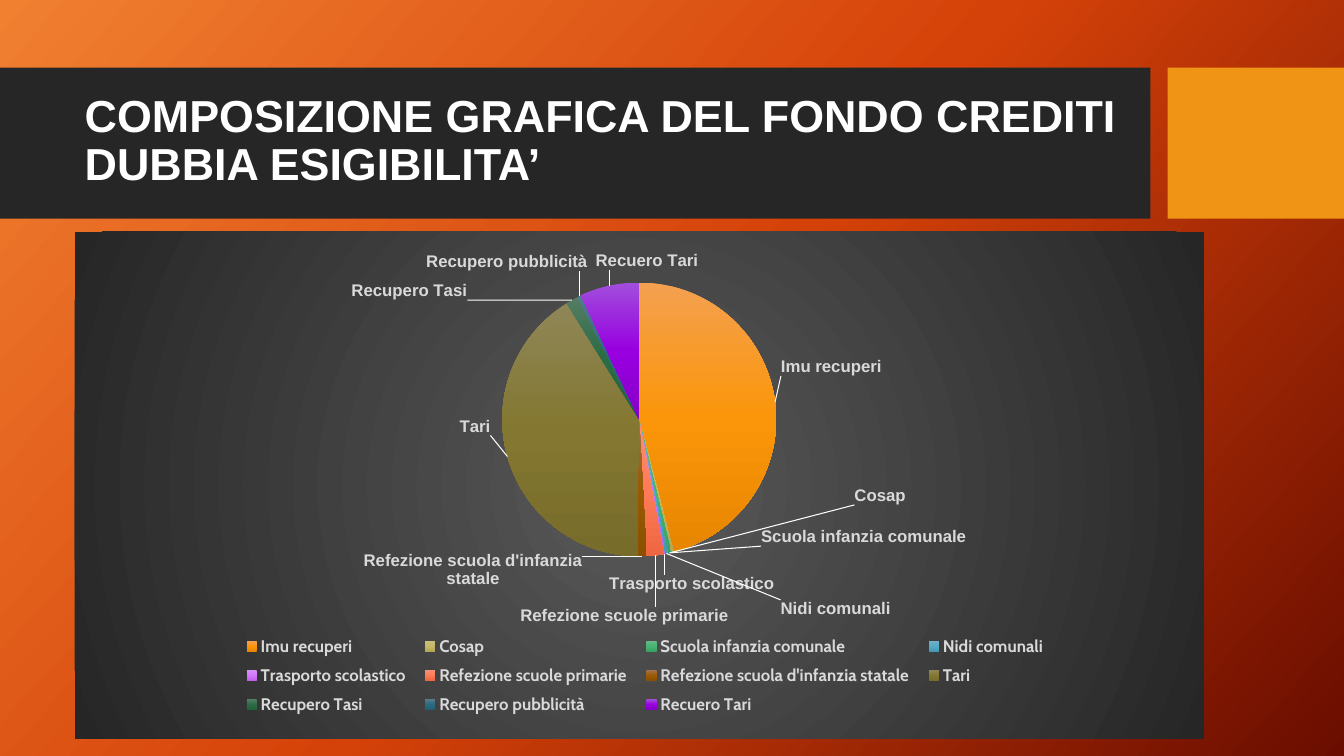
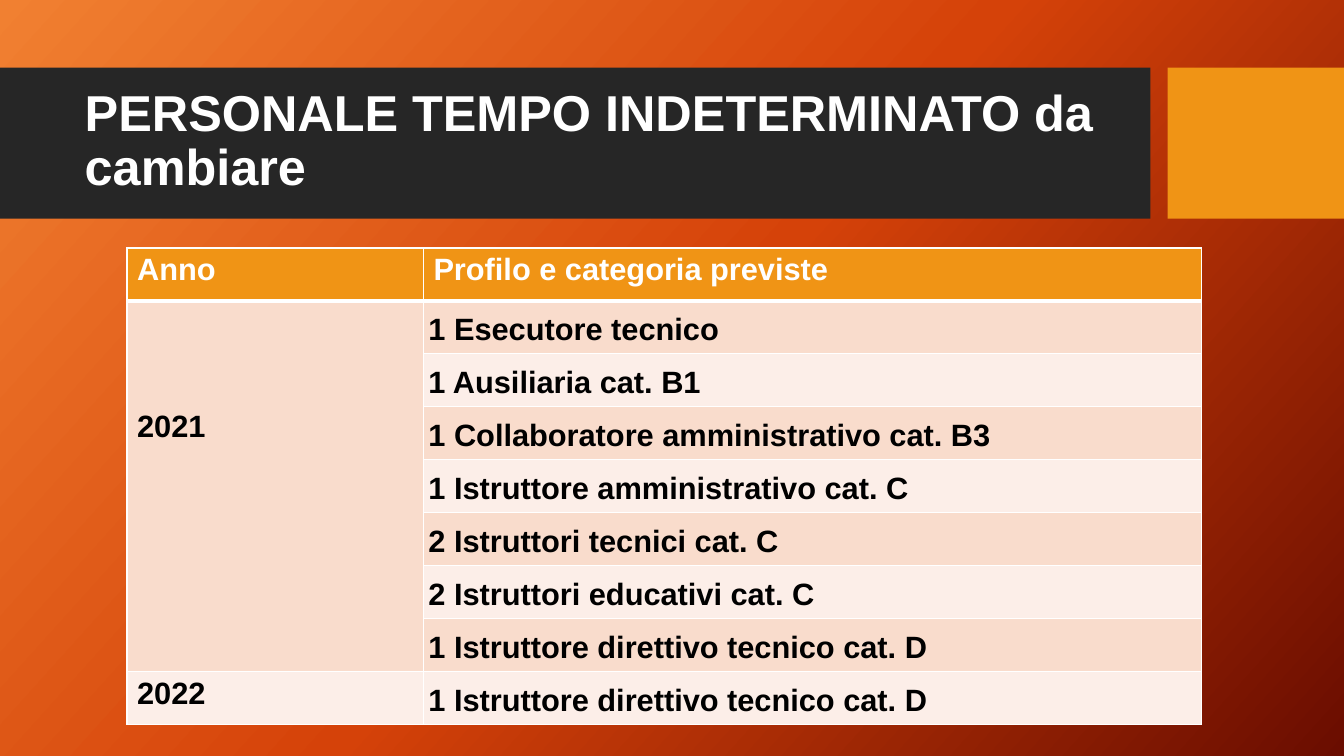
from pptx import Presentation
from pptx.chart.data import CategoryChartData
from pptx.dml.color import RGBColor
from pptx.enum.chart import XL_CHART_TYPE, XL_LABEL_POSITION, XL_LEGEND_POSITION
from pptx.enum.shapes import MSO_SHAPE
from pptx.enum.text import MSO_ANCHOR, MSO_AUTO_SIZE, PP_ALIGN
from pptx.oxml import parse_xml
from pptx.oxml.ns import nsdecls, qn
from pptx.util import Inches, Pt

COLORS = {
    "band": "262626", "accent": "F09415", "white": "FFFFFF", "black": "000000",
    "label": "D9D9D9", "row_dark": "F9DCCC", "row_light": "FCEEE8",
}
BACKGROUND = ("F18031", "D54209", "6A0D00")
CHART_AREA = ("595959", "262626")

# category, value, gradient, label shift as fractions of the chart's size
CREDITS = [
    ("Imu recuperi", 46, ("F4A050", "FB960A", "E88600"), (0, -0.05)),
    ("Cosap", 0.3, ("C8BE7F", "C5B867", "B4A756"), (0.16, -0.14)),
    ("Scuola infanzia comunale", 0.4, ("67B884", "46B472", "3AA464"), (0.08, -0.06)),
    ("Nidi comunali", 0.3, ("71B0C8", "55A9C5", "4798B4"), (0.1, 0.08)),
    ("Trasporto scolastico", 0.2, ("D790FB", "D377FF", "BE62EA"), (-0.05, 0.03)),
    ("Refezione scuole primarie", 2, ("FD8F75", "FF7B57", "EE6742"), (-0.12, 0.09)),
    ("Refezione scuola d'infanzia statale", 1, ("A1704C", "9A5A03", "8B5100"), (-0.15, -0.02)),
    ("Tari", 41, ("8F8658", "837731", "776C29"), (-0.01, -0.08)),
    ("Recupero Tasi", 1.4, ("557D62", "2A6C44", "23633C"), (-0.09, 0.01)),
    ("Recupero pubblicità", 0.5, ("557B8B", "2B697E", "235F74"), (0.01, -0.04)),
    ("Recuero Tari", 7, ("A14EDC", "9800E0", "8700C7"), (0.08, -0.02)),
]
STAFF = [
    ("2021", "1 Esecutore tecnico"),
    ("", "1 Ausiliaria cat. B1"),
    ("", "1 Collaboratore amministrativo cat. B3"),
    ("", "1 Istruttore amministrativo cat. C"),
    ("", "2 Istruttori tecnici cat. C"),
    ("", "2 Istruttori educativi cat. C"),
    ("", "1 Istruttore direttivo tecnico cat. D"),
    ("2022", "1 Istruttore direttivo tecnico cat. D"),
]


def rgb(name):
    return RGBColor.from_string(COLORS[name])


def set_attrs(obj, **values):
    for name, value in values.items():
        setattr(obj, name, value)


def set_font(font, size, color, name="Arial", bold=True):
    set_attrs(font, size=Pt(size), name=name, bold=bold)
    font.color.rgb = rgb(color)


def gradient(colors, angle=None):
    """Evenly spaced gradient: linear at an angle, or circular without one."""
    step = 100000 // (len(colors) - 1)
    stops = "".join(f'<a:gs pos="{i * step}"><a:srgbClr val="{color}"/></a:gs>'
                    for i, color in enumerate(colors))
    if angle is None:
        direction = ('<a:path path="circle"><a:fillToRect l="50000" t="50000" '
                     'r="50000" b="50000"/></a:path>')
    else:
        direction = f'<a:lin ang="{angle * 60000}" scaled="0"/>'
    return parse_xml(f'<a:gradFill {nsdecls("a")} rotWithShape="1">'
                     f'<a:gsLst>{stops}</a:gsLst>{direction}</a:gradFill>')


def replace_gradients(element, gradients):
    """Swap the gradient fills under an element, in document order."""
    for old, new in zip(element.findall(".//" + qn("a:gradFill")), gradients):
        old.getparent().replace(old, new)


def style_layout(layout, slide):
    """Give the layout its background and bands, which are drawn via a slide."""
    layout.background.fill.gradient()
    replace_gradients(layout.element, [gradient(BACKGROUND, 42)])
    for left, width, color in ((0, 11.41, "band"), (11.58, 1.75, "accent")):
        sp = slide.shapes.add_shape(MSO_SHAPE.RECTANGLE, Inches(left), Inches(0.67),
                                    Inches(width), Inches(1.5))
        sp.shadow.inherit = False
        sp.fill.solid()
        sp.fill.fore_color.rgb = rgb(color)
        sp.line.fill.background()
        layout.shapes.element.insert(2, sp.element)


def add_title(slide, text, size):
    title = slide.shapes.title
    set_attrs(title, left=Inches(0.74), top=Inches(0.82),
              width=Inches(10.51), height=Inches(1.18))
    tf = title.text_frame
    set_attrs(tf, text=text, word_wrap=True, auto_size=MSO_AUTO_SIZE.NONE,
              vertical_anchor=MSO_ANCHOR.MIDDLE)
    p = tf.paragraphs[0]
    set_attrs(p, alignment=PP_ALIGN.LEFT, line_spacing=0.9)
    set_font(p.runs[0].font, size, "white")


def manual_layout(**values):
    items = "".join(f'<c:{name} val="{value}"/>' for name, value in values.items())
    return parse_xml(f'<c:layout {nsdecls("c")}><c:manualLayout>{items}'
                     '</c:manualLayout></c:layout>')


def set_layout(element, index, **values):
    """Place a chart part, given as fractions of the chart's size."""
    for old in element.findall(qn("c:layout")):
        element.remove(old)
    element.insert(index, manual_layout(**values))


def style_labels(series, chart):
    labels = series.data_labels
    set_attrs(labels, show_category_name=True, show_value=False,
              position=XL_LABEL_POSITION.OUTSIDE_END,
              number_format="#,##0.00\\ _€", number_format_is_linked=False)
    set_font(labels.font, 12, "label")
    for i in range(len(CREDITS)):
        label = series.points[i].data_label
        label.position = XL_LABEL_POSITION.OUTSIDE_END
        set_font(label.font, 12, "label")
    for element, credit in zip(chart.element.iter(qn("c:dLbl")), CREDITS):
        x, y = credit[3]
        set_layout(element, 1, x=x, y=y)
        element.find(qn("c:showVal")).set("val", "0")
        element.find(qn("c:showCatName")).set("val", "1")
    chart.element.find(".//" + qn("c:dLbls")).append(parse_xml(
        f'<c:leaderLines {nsdecls("c", "a")}><c:spPr><a:ln w="9525"><a:solidFill>'
        f'<a:srgbClr val="{COLORS["white"]}"/></a:solidFill></a:ln></c:spPr></c:leaderLines>'))


def add_credit_pie(slide):
    data = CategoryChartData()
    data.categories = [credit[0] for credit in CREDITS]
    data.add_series("Series 1", [credit[1] for credit in CREDITS])
    chart = slide.shapes.add_chart(XL_CHART_TYPE.PIE, Inches(0.74), Inches(2.3),
                                   Inches(11.2), Inches(5.03), data).chart
    set_attrs(chart, has_title=False, has_legend=True)
    set_font(chart.font, 10, "white", "Cabin", False)
    set_attrs(chart.legend, position=XL_LEGEND_POSITION.BOTTOM, include_in_layout=False)
    set_font(chart.legend.font, 12, "label", "Cabin")

    plot = chart.plots[0]
    plot.vary_by_categories = True
    series = plot.series[0]
    for i in range(len(CREDITS)):
        series.points[i].format.fill.gradient()
    replace_gradients(chart.element, [gradient(credit[2], 90) for credit in CREDITS])
    style_labels(series, chart)

    set_layout(chart.element.find(".//" + qn("c:plotArea")), 0, layoutTarget="inner",
               xMode="edge", yMode="edge", x=0.08, y=0.1, w=0.84, h=0.54)
    set_layout(chart.element.find(".//" + qn("c:legend")), 1,
               xMode="edge", yMode="edge", x=0.14, y=0.78, w=0.73, h=0.19)
    area = parse_xml(f'<c:spPr {nsdecls("c", "a")}><a:ln><a:noFill/></a:ln></c:spPr>')
    area.insert(0, gradient(CHART_AREA))
    chart.element.find(qn("c:chart")).addnext(area)


def set_borders(cell, **widths):
    """Draw white cell borders; widths are in points by side: L, R, T, B."""
    tcPr = cell._tc.get_or_add_tcPr()
    for i, side in enumerate("LRTB"):
        tcPr.insert(i, parse_xml(
            f'<a:ln{side} {nsdecls("a")} w="{Pt(widths.get(side, 1))}"><a:solidFill>'
            f'<a:srgbClr val="{COLORS["white"]}"/></a:solidFill></a:ln{side}>'))


def fill_cell(cell, text, fill, color="black", **borders):
    cell.fill.solid()
    cell.fill.fore_color.rgb = rgb(fill)
    set_borders(cell, **borders)
    if text:
        cell.text = text
        set_font(cell.text_frame.paragraphs[0].runs[0].font, 22, color)


def add_staff_table(slide):
    rows = len(STAFF) + 1
    table = slide.shapes.add_table(rows, 2, Inches(1.26), Inches(2.46),
                                   Inches(10.66), Inches(4.73)).table
    for column, width in zip(table.columns, (2.94, 7.72)):
        column.width = Inches(width)
    for col, text in enumerate(("Anno", "Profilo e categoria previste")):
        fill_cell(table.cell(0, col), text, "accent", "white", B=3)
    for row, (year, profile) in enumerate(STAFF, 1):
        top = 3 if row == 1 else 1
        band = "row_dark" if row % 2 else "row_light"
        fill_cell(table.cell(row, 0), year, band, T=top)
        cell = table.cell(row, 1)
        fill_cell(cell, profile, band, T=top)
        set_attrs(cell, margin_left=Inches(0.05), margin_right=Inches(0.05))
        set_attrs(cell.text_frame.paragraphs[0], alignment=PP_ALIGN.JUSTIFY, line_spacing=1.2)
    first_year = table.cell(1, 0)
    first_year.merge(table.cell(rows - 2, 0))
    first_year.margin_top = Inches(1.08)


def main():
    prs = Presentation()
    set_attrs(prs, slide_width=Inches(13.33), slide_height=Inches(7.5))
    layout = prs.slide_layouts[5]

    slide = prs.slides.add_slide(layout)
    style_layout(layout, slide)
    add_title(slide, "COMPOSIZIONE GRAFICA DEL FONDO CREDITI DUBBIA ESIGIBILITA’", 32)
    add_credit_pie(slide)

    slide = prs.slides.add_slide(layout)
    add_title(slide, "PERSONALE TEMPO INDETERMINATO da cambiare", 36)
    add_staff_table(slide)

    prs.save("out.pptx")


if __name__ == "__main__":
    main()
